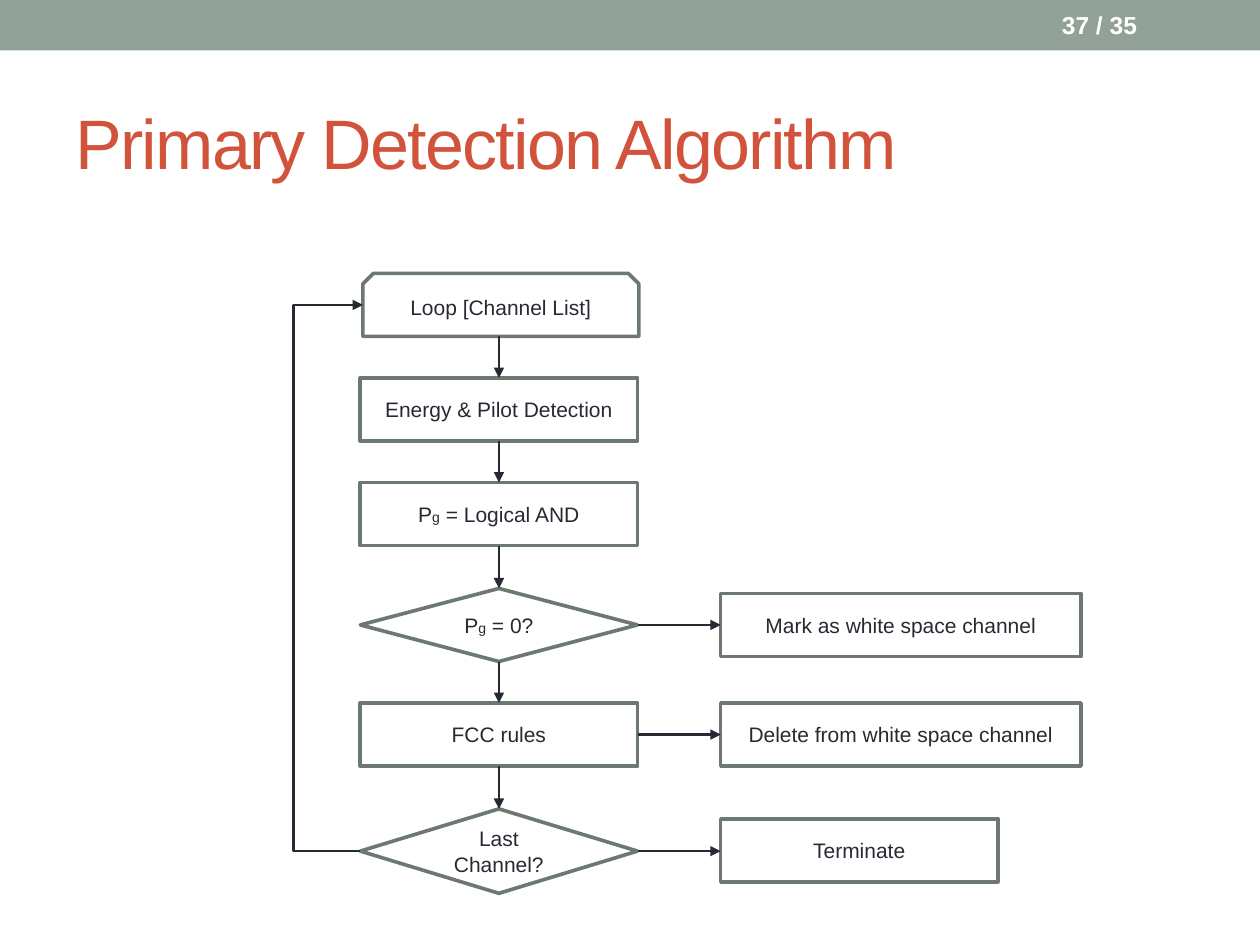
from lxml.etree import SubElement
from pptx import Presentation
from pptx.dml.color import RGBColor
from pptx.enum.shapes import MSO_CONNECTOR, MSO_SHAPE
from pptx.enum.text import MSO_ANCHOR, PP_ALIGN
from pptx.oxml.ns import qn
from pptx.util import Inches, Pt

COLORS = {"bar": "93A299", "title": "D2533C", "text": "292934",
          "outline": "6D7871", "white": "FFFFFF"}
FONT = "Arial"

# Flowchart grid, in inches
MAIN_X, SIDE_X = 2.86, 5.72
BOX_W, WIDE_W, BOX_H = 2.2, 2.86, 0.5
LOOP_X = 2.33


def rgb(name):
    return RGBColor.from_string(COLORS[name])


def style_run(r, size, color, bold=False):
    r.font.size = Pt(size)
    r.font.name = FONT
    r.font.bold = bold
    r.font.color.rgb = rgb(color)


def add_text(s, text, x, y, w, h, size, color, bold=False, spacing=0):
    tf = s.shapes.add_textbox(Inches(x), Inches(y), Inches(w), Inches(h)).text_frame
    tf.word_wrap = True
    tf.vertical_anchor = MSO_ANCHOR.MIDDLE
    tf.text = text
    r = tf.paragraphs[0].runs[0]
    style_run(r, size, color, bold)
    if spacing:
        r.font._element.set("spc", str(spacing * 100))


def add_bar(s):
    sp = s.shapes.add_shape(MSO_SHAPE.RECTANGLE, 0, 0, Inches(10), Inches(0.4))
    sp.shadow.inherit = False
    sp.fill.solid()
    sp.fill.fore_color.rgb = rgb("bar")
    sp.line.fill.background()


def add_step(s, kind, parts, x, y, w=BOX_W, h=BOX_H):
    """Add a flowchart step; parts are (text, size) runs."""
    sp = s.shapes.add_shape(kind, Inches(x), Inches(y), Inches(w), Inches(h))
    sp.shadow.inherit = False
    sp.fill.solid()
    sp.fill.fore_color.rgb = rgb("white")
    sp.line.color.rgb = rgb("outline")
    sp.line.width = Pt(2.08)
    tf = sp.text_frame
    tf.word_wrap = True
    tf.vertical_anchor = MSO_ANCHOR.MIDDLE
    p = tf.paragraphs[0]
    p.alignment = PP_ALIGN.CENTER
    for text, size in parts:
        r = p.add_run()
        r.text = text
        style_run(r, size, "text")
    return sp


def add_arrow(s, x1, y1, x2, y2, kind=MSO_CONNECTOR.STRAIGHT):
    c = s.shapes.add_connector(kind, x1, y1, x2, y2)
    c.line.color.rgb = rgb("text")
    c.line.width = Pt(1.5)
    SubElement(c.line._get_or_add_ln(), qn("a:tailEnd"), type="triangle")
    SubElement(c._element.spPr, qn("a:effectLst"))
    return c


def add_down_arrow(s, upper, lower):
    x = Inches(MAIN_X + BOX_W / 2)
    add_arrow(s, x, upper.top + upper.height, x, lower.top)


def add_side_arrow(s, left, right):
    y = left.top + left.height // 2
    add_arrow(s, left.left + left.width, y, right.left, y)


def add_loop_back(s, last, first):
    # Half a turn puts the start at the last step and the head at the first
    c = add_arrow(s, first.left, first.top + first.height // 2,
                  last.left, last.top + last.height // 2, MSO_CONNECTOR.ELBOW)
    c._element.spPr.find(qn("a:xfrm")).set("rot", "10800000")
    bend = (Inches(LOOP_X) - last.left) / (first.left - last.left)
    guides = c._element.spPr.find(qn("a:prstGeom")).get_or_add_avLst()
    SubElement(guides, qn("a:gd"), name="adj1", fmla=f"val {round(bend * 100000)}")


def main():
    prs = Presentation()
    prs.slide_width, prs.slide_height = Inches(10), Inches(7.5)
    s = prs.slides.add_slide(prs.slide_layouts[6])

    # Header
    add_bar(s)
    add_text(s, "37 / 35", 8.33, 0.02, 1.17, 0.36, 14, "white", bold=True)
    add_text(s, "Primary Detection Algorithm", 0.5, 0.58, 9, 1.08, 40, "title", spacing=-1)

    # Main column
    process, decision = MSO_SHAPE.FLOWCHART_PROCESS, MSO_SHAPE.FLOWCHART_DECISION
    pg = [("P", 12), ("g", 8)]
    loop = add_step(s, MSO_SHAPE.SNIP_2_SAME_RECTANGLE, [("Loop [Channel List]", 12)],
                    2.88, 2.17, 2.19)
    detect = add_step(s, process, [("Energy & Pilot Detection", 12)], MAIN_X, 3)
    combine = add_step(s, process, pg + [(" = Logical AND", 12)], MAIN_X, 3.83)
    check = add_step(s, decision, pg + [(" = 0?", 12)], MAIN_X, 4.67, h=0.58)
    rules = add_step(s, process, [("FCC rules", 12)], MAIN_X, 5.58)
    last = add_step(s, decision, [("Last Channel?", 12)], MAIN_X, 6.42, h=0.67)

    # Outcomes
    mark = add_step(s, process, [("Mark as white space channel", 12)], SIDE_X, 4.71, WIDE_W)
    delete = add_step(s, process, [("Delete from white space channel", 12)],
                      SIDE_X, 5.58, WIDE_W)
    stop = add_step(s, process, [("Terminate", 12)], SIDE_X, 6.5)

    # Arrows
    column = [loop, detect, combine, check, rules, last]
    for upper, lower in zip(column, column[1:]):
        add_down_arrow(s, upper, lower)
    for left, right in ((check, mark), (rules, delete), (last, stop)):
        add_side_arrow(s, left, right)
    add_loop_back(s, last, loop)

    prs.save("out.pptx")


if __name__ == "__main__":
    main()
